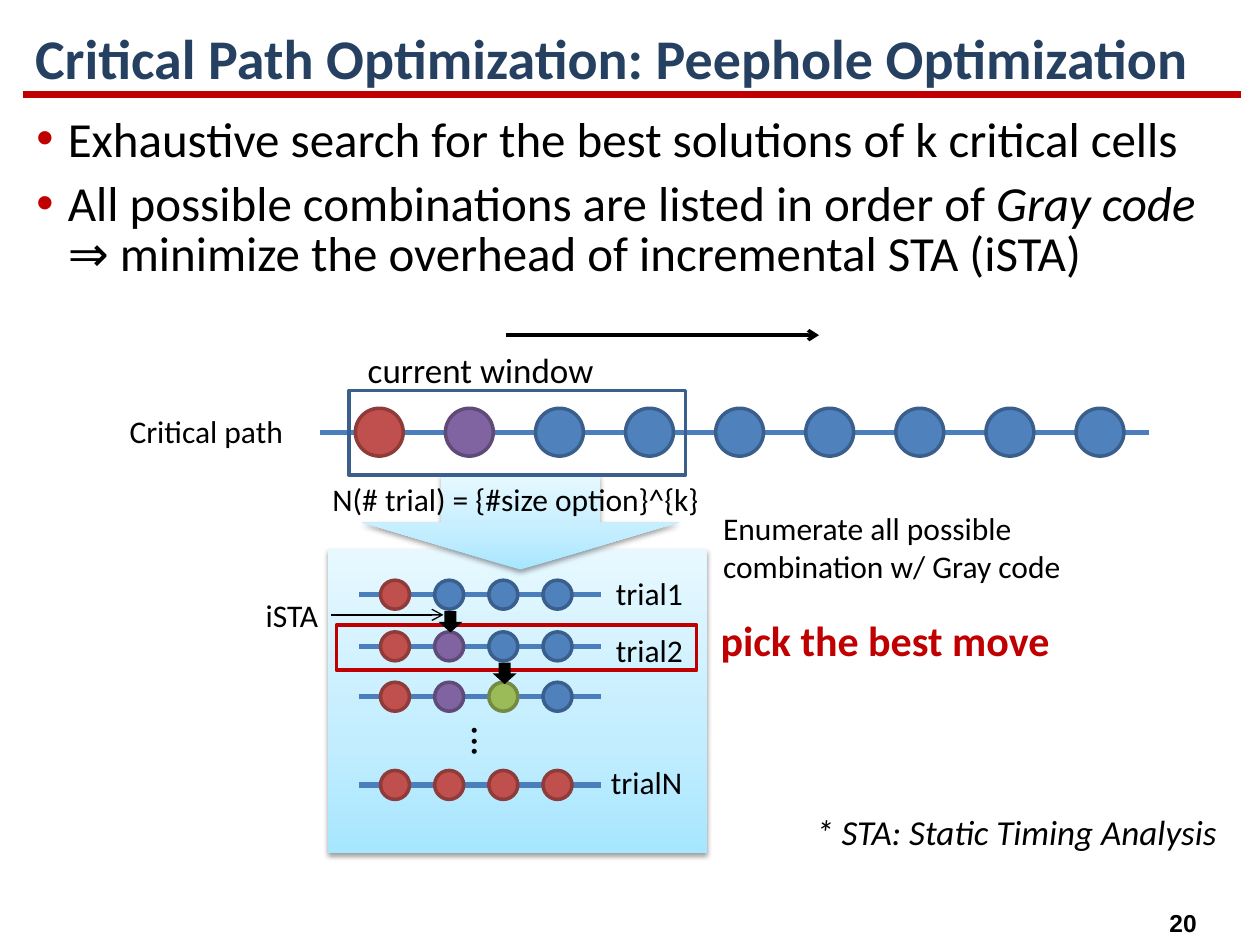
from dataclasses import dataclass

from lxml import etree
from pptx import Presentation, util as u
from pptx.dml.color import RGBColor
from pptx.enum import shapes, text
from pptx.oxml.ns import qn

KIND, ALIGN = shapes.MSO_SHAPE, text.PP_ALIGN


@dataclass(frozen=True)
class Theme:
    font: str = "Calibri"
    ink: str = "000000"
    red: str = "C00000"
    navy: str = "254061"
    wire: str = "4B7EBC"
    edge: str = "3A5F8C"
    fade: tuple = ((0, "A7E6FF"), (35, "C1EDFF"), (100, "E7F8FF"))
    head: int = 32
    body: int = 28
    big: int = 24
    mid: int = 20
    small: int = 18
    page: int = 14


@dataclass(frozen=True)
class Chain:
    """A row of beads on a wire; lengths in grid cells."""
    beads: str      # one colour key per bead
    y: float        # middle of the row
    left: float     # left end of the wire
    right: float
    first: float    # left side of the first bead
    step: float
    size: float


T = Theme()
BEADS = {  # fill and outline
    "r": ("C0504D", "8E3B39"), "p": ("8064A2", "5F4A78"),
    "b": ("4F81BD", T.edge), "g": ("9BBB59", "738A42"),
}

prs = Presentation()
prs.slide_width, prs.slide_height = u.Inches(10), u.Inches(7.5)
slide = prs.slides.add_slide(prs.slide_layouts[6])
root = slide.shapes
CELL = prs.slide_width / 100  # grid of 100 columns by 75 rows


def grid(*cells: float) -> list[int]:
    return [round(c * CELL) for c in cells]


def rgb(code: str) -> RGBColor:
    return RGBColor.from_string(code)


def node(up, tag: str, **attrs):
    return etree.SubElement(up, qn(tag), {k: str(v) for k, v in attrs.items()})


def shape(kind, box: tuple, fill: str = "", line: str = "", on=root):
    item = on.add_shape(kind, *grid(*box))
    item.shadow.inherit = False
    if fill:
        item.fill.solid()
        item.fill.fore_color.rgb = rgb(fill)
    else:
        item.fill.background()
    if line:
        item.line.color.rgb = rgb(line)
        item.line.width = u.Pt(2)
    else:
        item.line.fill.background()
    return item


def glow(kind, box: tuple):
    """Shape with the pale blue gradient and a soft shadow."""
    item = shape(kind, box)
    item.fill.gradient()
    item.fill.gradient_angle = 90
    props = item._element.spPr
    stops = props.find(qn("a:gradFill")).find(qn("a:gsLst"))
    for old in list(stops):
        stops.remove(old)
    for pos, code in T.fade:
        node(node(stops, "a:gs", pos=pos * 1000), "a:srgbClr", val=code)
    cast = node(props.find(qn("a:effectLst")), "a:outerShdw", blurRad=40000,
                dist=20000, dir=5400000, rotWithShape=0)
    node(node(cast, "a:srgbClr", val=T.ink), "a:alpha", val=38000)


def line(x1: float, y1: float, x2: float, y2: float, color: str,
         width: float, arrow: bool = False, on=root):
    item = on.add_connector(shapes.MSO_CONNECTOR.STRAIGHT,
                            *grid(x1, y1, x2, y2))
    item.line.color.rgb = rgb(color)
    item.line.width = u.Pt(width)
    if arrow:
        node(item.line._get_or_add_ln(), "a:tailEnd", type="arrow")
    node(item._element.spPr, "a:effectLst")
    return item


def write(words, box: tuple, size: int = T.small, color: str = T.ink,
          bold: bool = False, italic: bool = False, font: str = T.font,
          wrap: bool = False, grow: bool = True, align=None,
          space: float | None = None, bullet: str = "", on=root):
    """Words: a string, or a list of paragraphs made of (text, italic) runs."""
    item = on.add_textbox(*grid(*box))
    frame = item.text_frame
    frame.word_wrap = wrap
    fit = text.MSO_AUTO_SIZE
    frame.auto_size = fit.SHAPE_TO_FIT_TEXT if grow else fit.NONE
    paras = [[(words, italic)]] if isinstance(words, str) else words
    for i, runs in enumerate(paras):
        para = frame.add_paragraph() if i else frame.paragraphs[0]
        para.alignment = align
        if space:
            para.line_spacing = space
        if bullet:
            para.space_before = u.Pt(0.3 * size)
            props = para._p.get_or_add_pPr()
            props.set("marL", str(u.Inches(0.25)))
            props.set("indent", str(-u.Inches(0.25)))
            node(node(props, "a:buClr"), "a:srgbClr", val=T.red)
            node(props, "a:buFont", typeface="Arial")
            node(props, "a:buChar", char=bullet)
        for part, slant in runs:
            run = para.add_run()
            run.text = part
            face = run.font
            face.name, face.size = font, u.Pt(size)
            face.bold, face.italic = bold, slant
            face.color.rgb = rgb(color)
    return item


def chain(row: Chain, on=root) -> None:
    line(row.left, row.y, row.right, row.y, T.wire, 3, on=on)
    for i, key in enumerate(row.beads):
        box = (row.first + i * row.step, row.y - row.size / 2,
               row.size, row.size)
        shape(KIND.OVAL, box, *BEADS[key], on=on)


def trial(beads: str, y: float) -> None:
    row = Chain(beads, y, left=28.5, right=47.7, first=30.2, step=4.3, size=2.3)
    chain(row, root.add_group_shape().shapes)


# Heading, rule and page number
line(1.8, 7.5, 98.5, 7.5, T.red, 4.5)
title = write("Critical Path Optimization: Peephole Optimization",
              (1.8, 1.6, 96.8, 6.5), T.head, T.navy, bold=True,
              wrap=True, grow=False, space=0.9)
title.text_frame.vertical_anchor = text.MSO_ANCHOR.MIDDLE
write("20", (91.7, 71.6, 4.4, 3.4), T.page, bold=True, font="Arial",
      align=ALIGN.CENTER)

# Bullets
write([
    [("Exhaustive search for the best solutions of k critical cells", False)],
    [("All possible combinations are listed in order of ", False),
     ("Gray code ", True),
     ("⇒ minimize the overhead of incremental STA (iSTA)", False)],
], (1.9, 8.8, 96.6, 58.7), T.body, wrap=True, grow=False, space=0.85,
    bullet="•")

# Trial panel and the arrow into it
glow(KIND.RECTANGLE, (26, 43.6, 30.1, 24.1))
glow(KIND.DOWN_ARROW, (28.7, 37.7, 25.2, 7.5))

# Critical path with its sliding window
chain(Chain("rpbbbbbbb", 34.3, left=25.4, right=91.2, first=28.2, step=7.15,
            size=3.8))
window = root.add_group_shape().shapes
shape(KIND.RECTANGLE, (27.7, 31, 26.7, 6.7), line=T.edge, on=window)
write("current window", (28.2, 27.2, 20.1, 4.4), T.mid, on=window)
line(40.2, 26.6, 65, 26.6, T.ink, 2, arrow=True)
write("Critical path", (9.3, 32.2, 15, 4), wrap=True)
write("N(# trial) = {#size option}^{k}", (25.4, 37.6, 32.4, 4), wrap=True)
write("Enumerate all possible combination w/ Gray code",
      (56.4, 39.9, 29.4, 7.1), wrap=True)

# Trials
for beads, y in (("rbbb", 47.2), ("rpbb", 51.3), ("rpgb", 55.3),
                 ("rrrr", 62.3)):
    trial(beads, y)
dots = write("...", (35.2, 56.6, 6.1, 3.5), T.big)
dots.text_frame._txBody.bodyPr.set("vert", "eaVert")
for name, x, y, wide in (("trial1", 47.9, 45.1, 7.4), ("trial2", 47.9, 49.6, 7.4),
                         ("trialN", 47.5, 60.1, 7.7)):
    write(name, (x, y, wide, 4))

# Best move
shape(KIND.RECTANGLE, (26.7, 49.6, 28.6, 3.6), line=T.red)
write("pick the best move", (56.2, 48.3, 29.1, 5), T.big, T.red, bold=True)

# Incremental timing steps
ista = write("iSTA", (20.1, 46.8, 6.2, 4))
line(26.3, 48.8, 35.2, 48.8, T.ink, 0.75, arrow=True).begin_connect(ista, 3)
for i in range(2):
    shape(KIND.DOWN_ARROW, (34.8 + 4.3 * i, 48.5 + 4.1 * i, 1.9, 1.7), T.ink)

# Footnote
write("* STA: Static Timing Analysis", (63.8, 63.8, 35.4, 4.4), T.mid,
      italic=True)

prs.save("out.pptx")
